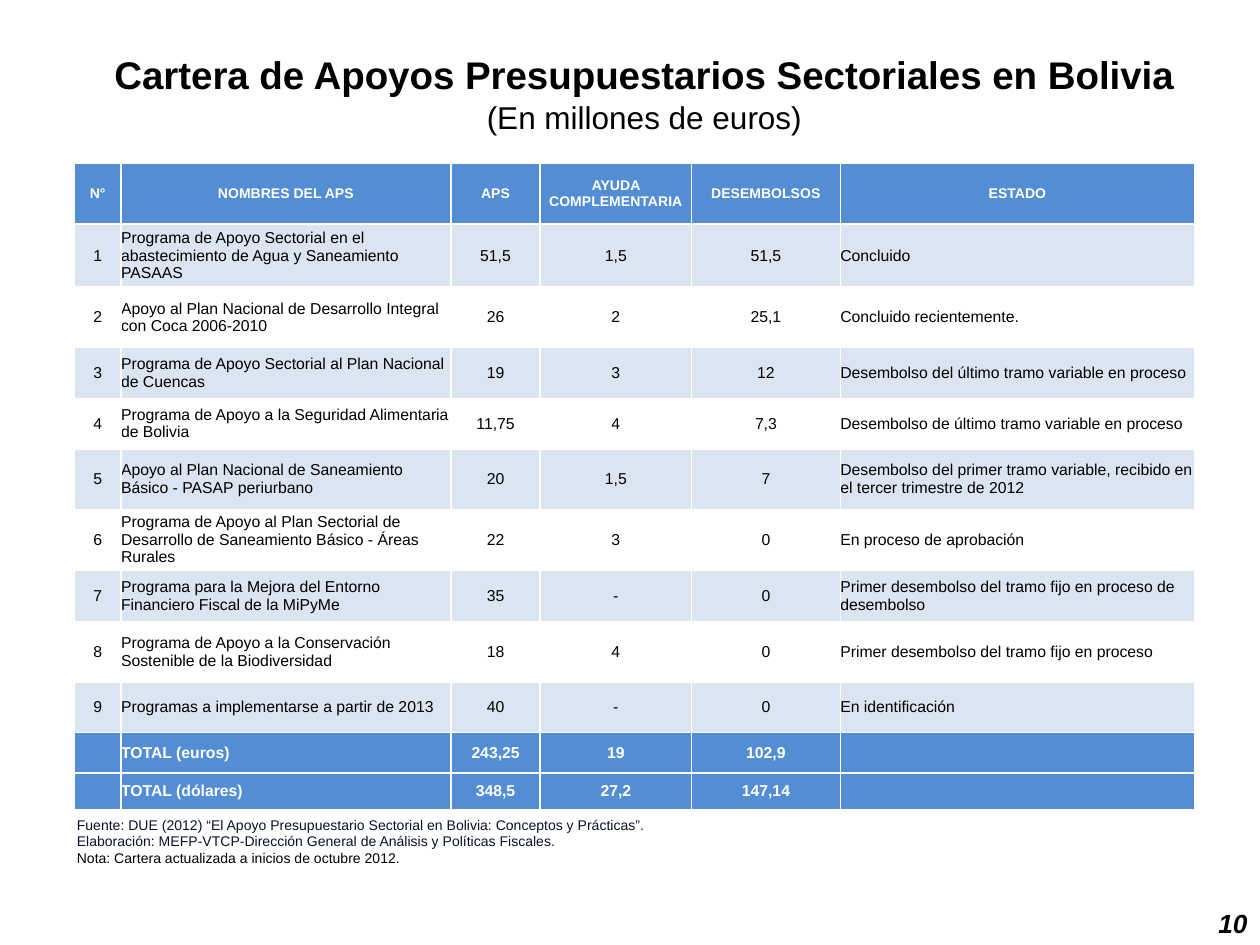
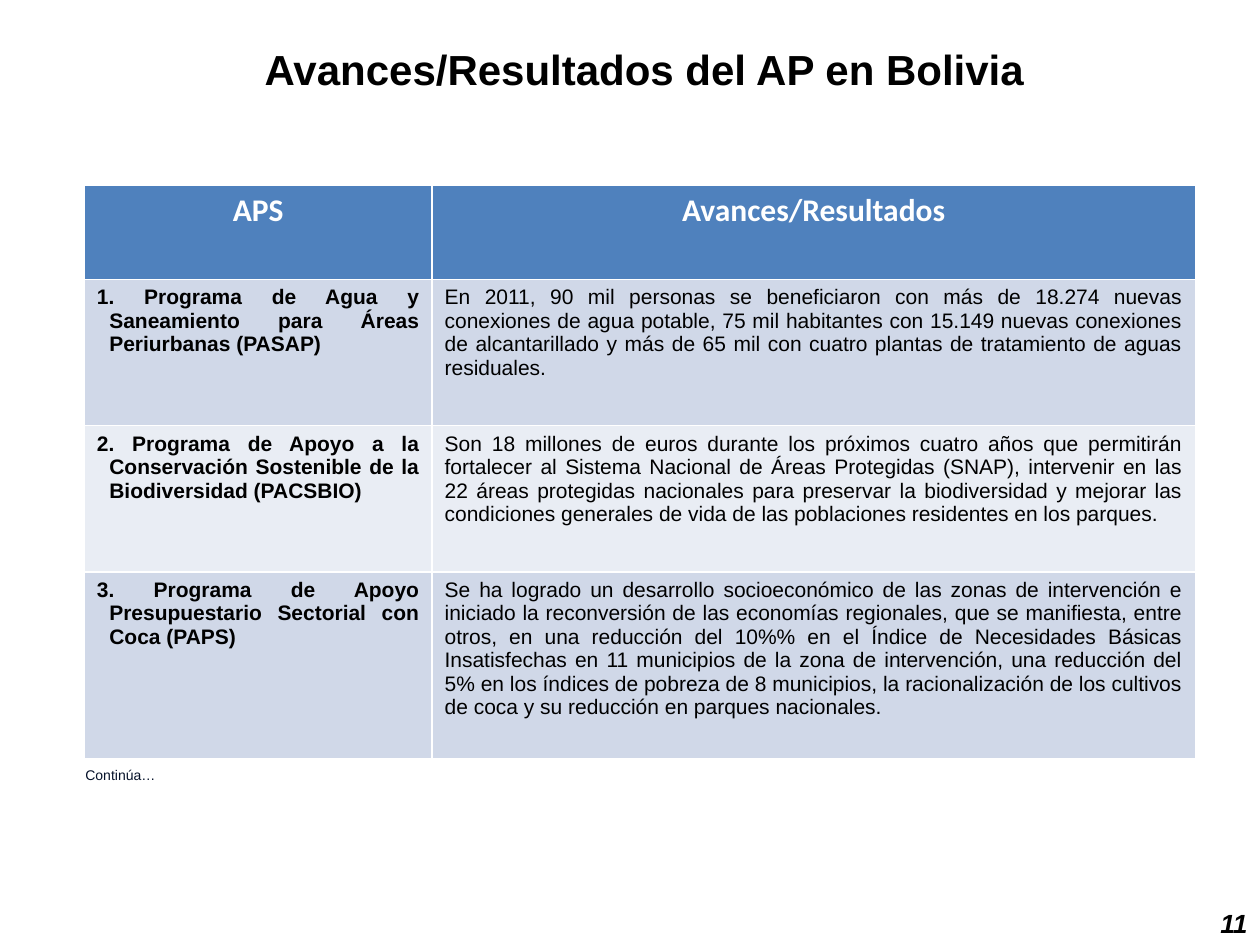
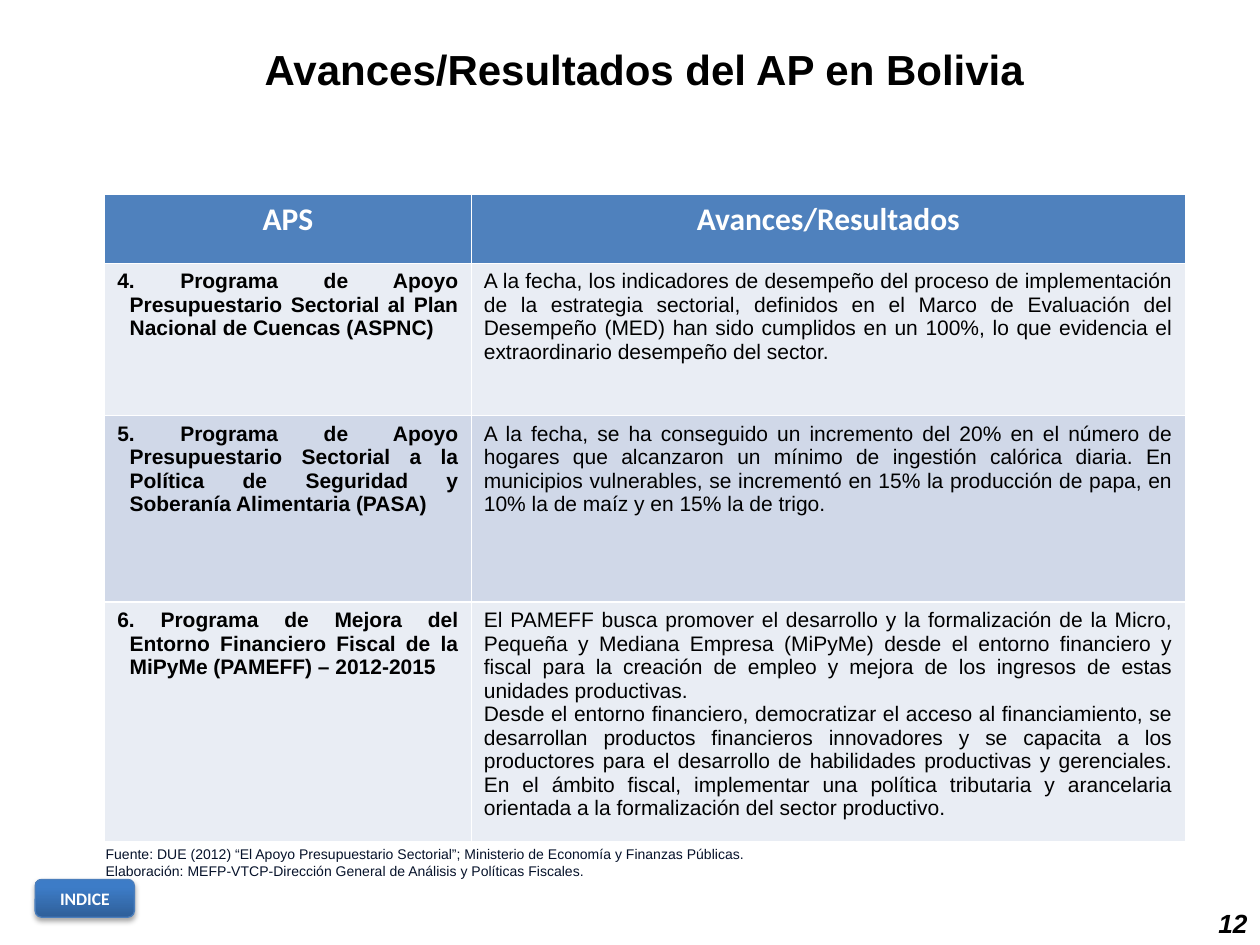
from lxml.etree import SubElement
from pptx import Presentation
from pptx.dml.color import RGBColor
from pptx.enum.shapes import MSO_SHAPE
from pptx.enum.text import MSO_ANCHOR, MSO_AUTO_SIZE, PP_ALIGN
from pptx.oxml.ns import qn
from pptx.util import Cm, Pt

HUES = {
    "black": "000000", "white": "FFFFFF", "navy": "06122A",
    "head": "4F81BD", "dark": "D0D8E8", "light": "E9EDF4",
    "total": "538ED5", "band": "DBE5F1",
    "low": "2F5F99", "high": "3D7CC7", "edge": "4B7EBC",
}
LEFT, MID, RIGHT, FULL = (PP_ALIGN.LEFT, PP_ALIGN.CENTER,
                          PP_ALIGN.RIGHT, PP_ALIGN.JUSTIFY)


def hue(name):
    return RGBColor.from_string(HUES[name])


class Deck:
    """Holds the shared style and the current slide."""

    def __init__(self, first):
        self.prs = Presentation()
        self.prs.slide_width, self.prs.slide_height = Cm(25.4), Cm(19.05)
        self.page = first - 1
        self.slide = None

    def style(self, para, size, color="black", bold=False, align=LEFT,
              face="Arial", italic=False):
        para.alignment = align
        font = para.font
        font.name, font.size = face, Pt(size)
        font.bold, font.italic = bold, italic
        font.color.rgb = hue(color)

    def start(self, title, top, size, sub=None):
        """Add a slide with its title and page number."""
        self.slide = self.prs.slides.add_slide(self.prs.slide_layouts[5])
        self.page += 1
        head = self.slide.shapes.title
        head.left, head.top = Cm(0.58), Cm(top)
        head.width, head.height = Cm(24.82), Cm(2.5)
        frame = head.text_frame
        frame.auto_size = MSO_AUTO_SIZE.NONE
        frame.vertical_anchor = MSO_ANCHOR.TOP
        frame.text = title
        self.style(frame.paragraphs[0], size, bold=True, align=MID)
        if sub:
            para = frame.add_paragraph()
            para.text = sub
            self.style(para, 18, align=MID)
        frame = self.box(19.05, 17.73, 6.35, 1.32, str(self.page))
        frame.vertical_anchor = MSO_ANCHOR.BOTTOM
        self.style(frame.paragraphs[0], 15, bold=True, align=RIGHT, italic=True)

    def box(self, left, top, width, height, text):
        shape = self.slide.shapes.add_textbox(
            Cm(left), Cm(top), Cm(width), Cm(height))
        frame = shape.text_frame
        frame.word_wrap = True
        frame.text = text
        return frame

    def source(self, left, top, lines):
        """Add the small lines below a table."""
        frame = self.box(left, top, 21.64, 0.42 * len(lines) + 0.2,
                         "\n".join(lines))
        for para in frame.paragraphs:
            note = para.text.startswith("Nota")
            self.style(para, 8, "black" if note else "navy")

    def grid(self, left, top, cols, rows, header):
        """Add a table with the given column widths and row heights."""
        table = self.slide.shapes.add_table(
            len(rows), len(cols), Cm(left), Cm(top),
            Cm(sum(cols)), Cm(sum(rows))).table
        table.first_row, table.horz_banding = header, False
        for col, width in zip(table.columns, cols):
            col.width = Cm(width)
        for row, height in zip(table.rows, rows):
            row.height = Cm(height)
        return table

    def cell(self, cell, text, fill, size, tight=False, **look):
        cell.text = text
        if fill:
            cell.fill.solid()
            cell.fill.fore_color.rgb = hue(fill)
        else:
            cell.fill.background()
        if tight:
            cell.vertical_anchor = MSO_ANCHOR.MIDDLE
            cell.margin_left = cell.margin_right = 0
            cell.margin_top = cell.margin_bottom = 0
        for para in cell.text_frame.paragraphs:
            self.style(para, size, **look)

    def results(self, left, top, cols, rows, items, fills):
        """Add a table of programmes and their results."""
        table = self.grid(left, top, cols, rows, True)
        for col, text in enumerate(("APS", "Avances/Resultados")):
            self.cell(table.cell(0, col), text, "head", 18, color="white",
                      bold=True, align=MID, face="Calibri")
        for row, pair in enumerate(items, 1):
            fill = fills[(row - 1) % 2]
            for col, text in enumerate(pair):
                self.cell(table.cell(row, col), text, fill, 12,
                          bold=col == 0, align=FULL)
            # Hanging indent of the numbered name
            para = table.cell(row, 0).text_frame.paragraphs[0]
            para.level = 1
            props = para._p.get_or_add_pPr()
            props.set("marL", str(Cm(0.25)))
            props.set("indent", str(-Cm(0.25)))

    def button(self, left, top, width, height, text):
        shape = self.slide.shapes.add_shape(
            MSO_SHAPE.ROUNDED_RECTANGLE,
            Cm(left), Cm(top), Cm(width), Cm(height))
        shape.fill.gradient()
        shape.fill.gradient_angle = 90
        for stop, place, name in zip(shape.fill.gradient_stops,
                                     (0, 0.8), ("low", "high")):
            stop.position, stop.color.rgb = place, hue(name)
        shape.line.color.rgb, shape.line.width = hue("edge"), Pt(0.75)
        # Soft shadow below
        shape.shadow.inherit = False
        glow = SubElement(
            shape._element.spPr.find(qn("a:effectLst")), qn("a:outerShdw"),
            blurRad=str(Pt(3.1)), dist=str(Pt(1.8)), dir="5400000",
            rotWithShape="0")
        tint = SubElement(glow, qn("a:srgbClr"), val=HUES["black"])
        SubElement(tint, qn("a:alpha"), val="35000")
        frame = shape.text_frame
        frame.text = text
        frame.vertical_anchor = MSO_ANCHOR.MIDDLE
        self.style(frame.paragraphs[0], 10, "white", True, MID, "Calibri")


HEADS = ("N°", "NOMBRES DEL APS", "APS", "AYUDA COMPLEMENTARIA",
         "DESEMBOLSOS", "ESTADO")
LOANS = (
    ("Programa de Apoyo Sectorial en el abastecimiento de Agua y Saneamiento "
     "PASAAS", "51,5", "1,5", "51,5", "Concluido"),
    ("Apoyo al Plan Nacional de Desarrollo Integral con Coca 2006-2010",
     "26", "2", "25,1", "Concluido recientemente."),
    ("Programa de Apoyo Sectorial al Plan Nacional de Cuencas",
     "19", "3", "12", "Desembolso del último tramo variable en proceso"),
    ("Programa de Apoyo a la Seguridad Alimentaria de Bolivia",
     "11,75", "4", "7,3", "Desembolso de último tramo variable en proceso"),
    ("Apoyo al Plan Nacional de Saneamiento Básico - PASAP periurbano",
     "20", "1,5", "7", "Desembolso del primer tramo variable, recibido en el "
     "tercer trimestre de 2012"),
    ("Programa de Apoyo al Plan Sectorial de Desarrollo de Saneamiento Básico "
     "- Áreas Rurales", "22", "3", "0", "En proceso de aprobación"),
    ("Programa para la Mejora del Entorno Financiero Fiscal de la MiPyMe",
     "35", "-", "0",
     "Primer desembolso del tramo fijo en proceso de desembolso"),
    ("Programa de Apoyo a la Conservación Sostenible de la Biodiversidad",
     "18", "4", "0", "Primer desembolso del tramo fijo en proceso"),
    ("Programas a implementarse a partir de 2013",
     "40", "-", "0", "En identificación"),
)
TOTALS = (
    ("", "TOTAL (euros)", "243,25", "19", "102,9", ""),
    ("", "TOTAL (dólares)", "348,5", "27,2", "147,14", ""),
)
FIRST = (
    ("1. Programa de Agua y Saneamiento para Áreas Periurbanas (PASAP)",
     "En 2011, 90 mil personas se beneficiaron con más de 18.274 nuevas "
     "conexiones de agua potable, 75 mil habitantes con 15.149 nuevas "
     "conexiones de alcantarillado y más de 65 mil con cuatro plantas de "
     "tratamiento de aguas residuales."),
    ("2. Programa de Apoyo a la Conservación Sostenible de la Biodiversidad "
     "(PACSBIO)",
     "Son 18 millones de euros durante los próximos cuatro años que "
     "permitirán fortalecer al Sistema Nacional de Áreas Protegidas (SNAP), "
     "intervenir en las 22 áreas protegidas nacionales para preservar la "
     "biodiversidad y mejorar las condiciones generales de vida de las "
     "poblaciones residentes en los parques."),
    ("3. Programa de Apoyo Presupuestario Sectorial con Coca (PAPS)",
     "Se ha logrado un desarrollo socioeconómico de las zonas de intervención "
     "e iniciado la reconversión de las economías regionales, que se "
     "manifiesta, entre otros, en una reducción del 10%% en el Índice de "
     "Necesidades Básicas Insatisfechas en 11 municipios de la zona de "
     "intervención, una reducción del 5% en los índices de pobreza de 8 "
     "municipios, la racionalización de los cultivos de coca y su reducción "
     "en parques nacionales."),
)
SECOND = (
    ("4. Programa de Apoyo Presupuestario Sectorial al Plan Nacional de "
     "Cuencas (ASPNC)",
     "A la fecha, los indicadores de desempeño del proceso de implementación "
     "de la estrategia sectorial, definidos en el Marco de Evaluación del "
     "Desempeño (MED) han sido cumplidos en un 100%, lo que evidencia el "
     "extraordinario desempeño del sector."),
    ("5. Programa de Apoyo Presupuestario Sectorial a la Política de "
     "Seguridad y Soberanía Alimentaria (PASA)",
     "A la fecha, se ha conseguido un incremento del 20% en el número de "
     "hogares que alcanzaron un mínimo de ingestión calórica diaria. En "
     "municipios vulnerables, se incrementó en 15% la producción de papa, en "
     "10% la de maíz y en 15% la de trigo."),
    ("6. Programa de Mejora del Entorno Financiero Fiscal de la MiPyMe "
     "(PAMEFF) – 2012-2015",
     "El PAMEFF busca promover el desarrollo y la formalización de la Micro, "
     "Pequeña y Mediana Empresa (MiPyMe) desde el entorno financiero y fiscal "
     "para la creación de empleo y mejora de los ingresos de estas unidades "
     "productivas.\n"
     "Desde el entorno financiero, democratizar el acceso al financiamiento, "
     "se desarrollan productos financieros innovadores y se capacita a los "
     "productores para el desarrollo de habilidades productivas y "
     "gerenciales. En el ámbito fiscal, implementar una política tributaria y "
     "arancelaria orientada a la formalización del sector productivo."),
)
MAKER = ("Elaboración: MEFP-VTCP-Dirección General de Análisis y Políticas "
         "Fiscales.")
RESULTS = "Avances/Resultados del AP en Bolivia"


def main():
    deck = Deck(first=10)

    # Portfolio of sector programmes
    deck.start("Cartera de Apoyos Presupuestarios Sectoriales en Bolivia",
               0.91, 22, "(En millones de euros)")
    lines = [HEADS]
    lines += [(str(num), *loan) for num, loan in enumerate(LOANS, 1)]
    lines += TOTALS
    cols = (0.94, 6.65, 1.8, 3.05, 3, 7.14)
    rows = (1.17, 1.22, 1.27, 1.22, 1.02, 1.02, 1.22, 1.22, 1.04, 1.22,
            1.02, 0.81, 0.74, 0.41)
    table = deck.grid(1.5, 2.13, cols, rows, False)
    for row, line in enumerate(lines, 1):
        strong = line in (HEADS, *TOTALS)
        fill = "total" if strong else "band" if row % 2 == 0 else None
        for col, text in enumerate(line):
            left = col in (1, 5) and row > 1
            deck.cell(table.cell(row, col), text, fill, 8 if row == 1 else 9,
                      tight=True, color="white" if strong else "black",
                      bold=strong, align=LEFT if left else MID)
    # Clear margin rows above and below
    last = len(rows) - 1
    for row, end in ((0, 5), (last, 3)):
        for col in range(len(cols)):
            deck.cell(table.cell(row, col), "", None, 8, tight=True)
        table.cell(row, 0).merge(table.cell(row, end))
    deck.source(1.3, 16.33, (
        "Fuente: DUE (2012) “El Apoyo Presupuestario Sectorial en Bolivia: "
        "Conceptos y Prácticas”.", MAKER,
        "Nota: Cartera actualizada a inicios de octubre 2012."))

    # Results of programmes 1 to 3
    deck.start(RESULTS, 0.74, 24)
    deck.results(1.7, 3.73, (7.01, 15.39), (1.9, 2.95, 2.95, 3.76),
                 FIRST, ("dark", "light"))
    deck.source(1.47, 15.32, ("Continúa…",))

    # Results of programmes 4 to 6
    deck.start(RESULTS, 0.74, 24)
    deck.results(2.11, 3.91, (7.39, 14.4), (1.4, 3.07, 3.76, 3.81),
                 SECOND, ("light", "dark"))
    deck.source(1.88, 16.92, (
        "Fuente: DUE (2012) “El Apoyo Presupuestario Sectorial”; Ministerio "
        "de Economía y Finanzas Públicas.", MAKER))
    deck.button(0.71, 17.73, 2, 0.76, "INDICE")

    deck.prs.save("out.pptx")


if __name__ == "__main__":
    main()
